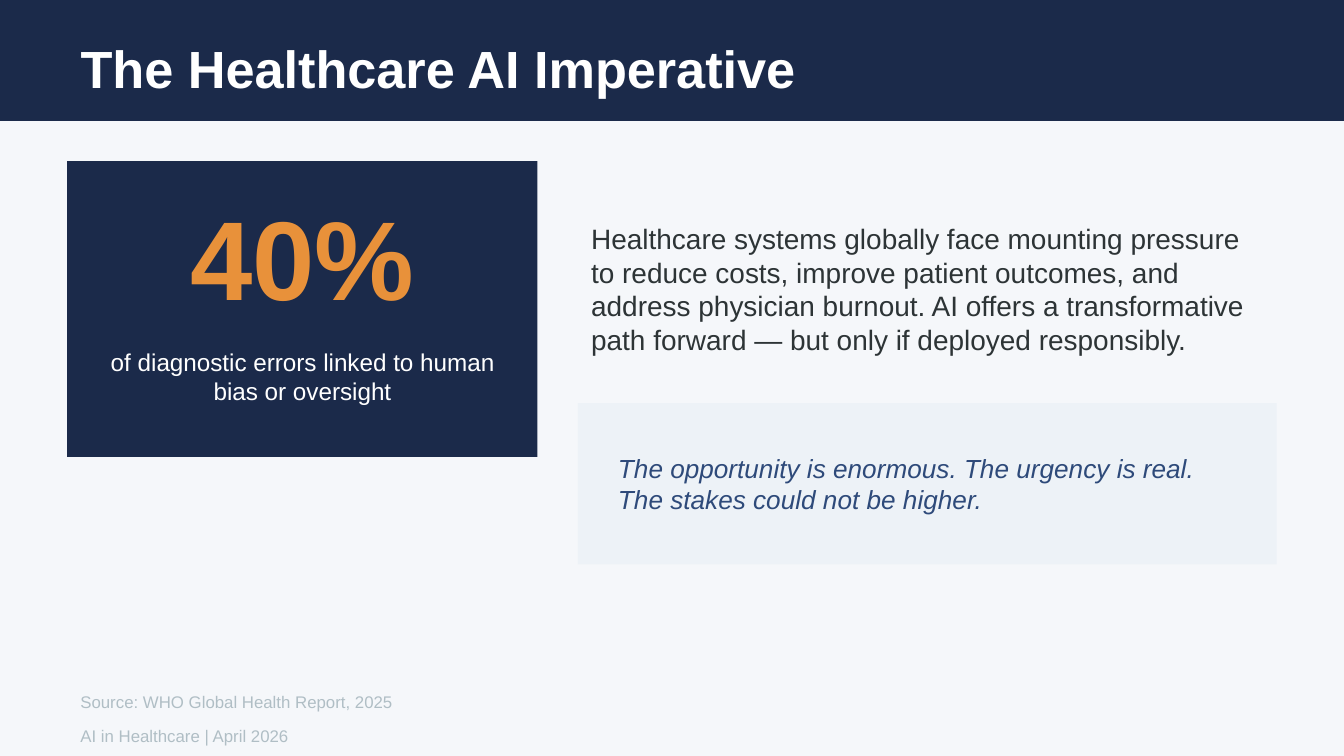
from dataclasses import dataclass
from pptx import Presentation
from pptx.dml.color import RGBColor
from pptx.enum.shapes import MSO_SHAPE
from pptx.enum.text import MSO_ANCHOR, MSO_AUTO_SIZE, PP_ALIGN
from pptx.util import Emu, Pt

SCALE = 4572


@dataclass(frozen=True)
class Theme:
    font: str = "Arial"
    paper: str = "F5F7FA"
    navy: str = "1B2A4A"
    white: str = "FFFFFF"
    accent: str = "E8913A"
    ink: str = "2D3436"
    panel: str = "EDF2F7"
    quote: str = "2E4A7A"
    muted: str = "B0BEC5"
    title_size: int = 28
    stat_size: int = 60
    label_size: int = 13
    body_size: int = 15
    quote_size: int = 14
    note_size: int = 9


THEME = Theme()


def px(count):
    return Emu(count * SCALE)


def color(code):
    return RGBColor.from_string(code)


def style(shape, text, size, tint, align=PP_ALIGN.LEFT, bold=False, italic=False):
    frame = shape.text_frame
    frame.text = text
    frame.word_wrap = True
    frame.auto_size = MSO_AUTO_SIZE.NONE
    frame.vertical_anchor = MSO_ANCHOR.MIDDLE
    line = frame.paragraphs[0]
    line.alignment = align
    for run in line.runs:
        font = run.font
        font.name = THEME.font
        font.size = Pt(size)
        font.bold = bold
        font.italic = italic
        font.color.rgb = color(tint)


def add_panel(slide, box, fill):
    panel = slide.shapes.add_shape(MSO_SHAPE.RECTANGLE, *map(px, box))
    panel.shadow.inherit = False
    panel.fill.solid()
    panel.fill.fore_color.rgb = color(fill)
    panel.line.fill.background()
    return panel


def add_text(slide, box, text, size, tint, **look):
    style(slide.shapes.add_textbox(*map(px, box)), text, size, tint, **look)


def add_title(slide, text):
    band = add_panel(slide, (0, 0, 2000, 180), THEME.navy)
    title = slide.shapes.title
    title.left, title.top, title.width, title.height = map(px, (100, 40, 1800, 120))
    style(title, text, THEME.title_size, THEME.white, bold=True)
    band.element.addnext(title.element)


def add_stat(slide, value, label):
    add_panel(slide, (100, 240, 700, 440), THEME.navy)
    add_text(slide, (100, 280, 700, 200), value, THEME.stat_size, THEME.accent,
             align=PP_ALIGN.CENTER, bold=True)
    add_text(slide, (120, 480, 660, 160), label, THEME.label_size, THEME.white,
             align=PP_ALIGN.CENTER)


def add_quote(slide, text):
    add_panel(slide, (860, 600, 1040, 240), THEME.panel)
    add_text(slide, (900, 640, 960, 160), text, THEME.quote_size, THEME.quote,
             italic=True)


def main():
    deck = Presentation()
    deck.slide_width, deck.slide_height = px(2000), px(1125)
    slide = deck.slides.add_slide(deck.slide_layouts.get_by_name("Title Only"))
    slide.background.fill.solid()
    slide.background.fill.fore_color.rgb = color(THEME.paper)

    add_title(slide, "The Healthcare AI Imperative")
    add_stat(slide, "40%", "of diagnostic errors linked to human bias or oversight")
    add_text(slide, (860, 280, 1040, 300),
             "Healthcare systems globally face mounting pressure to reduce costs, "
             "improve patient outcomes, and address physician burnout. AI offers a "
             "transformative path forward — but only if deployed responsibly.",
             THEME.body_size, THEME.ink)
    add_quote(slide, "The opportunity is enormous. The urgency is real. "
                     "The stakes could not be higher.")
    notes = (
        (1020, 1000, "Source: WHO Global Health Report, 2025"),
        (1070, 1800, "AI in Healthcare | April 2026"),
    )
    for top, width, text in notes:
        add_text(slide, (100, top, width, 50), text, THEME.note_size, THEME.muted)

    deck.save("out.pptx")


if __name__ == "__main__":
    main()
